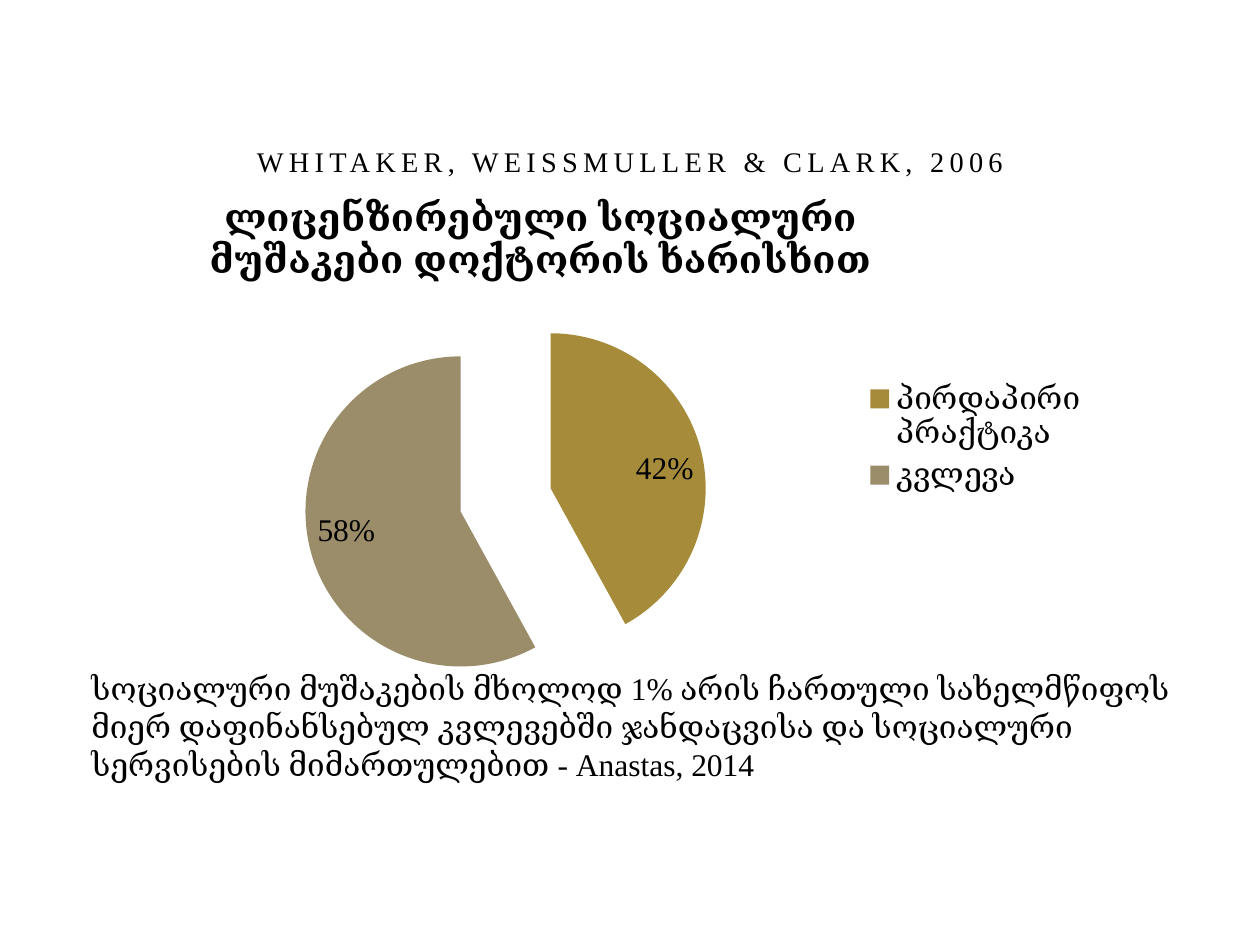
from lxml import etree
from pptx import Presentation
from pptx.chart.data import CategoryChartData as Data
from pptx.dml.color import RGBColor as RGB
from pptx.enum.chart import XL_CHART_TYPE as Kind, XL_LABEL_POSITION as Spot
from pptx.enum.chart import XL_LEGEND_POSITION as Side
from pptx.enum.text import MSO_ANCHOR as Anchor, MSO_AUTO_SIZE as Fit, PP_ALIGN as Align
from pptx.oxml.ns import qn
from pptx.util import Pt

SCALE = 914400 / 126
FACE = "Times New Roman"
BLACK = RGB(0, 0, 0)
GOLD = RGB(0xA6, 0x8C, 0x3A)
TAUPE = RGB(0x9C, 0x8D, 0x6A)
HEAD = ["ლიცენზირებული სოციალური", "მუშაკები დოქტორის ხარისხით"]
NOTE = [
    "სოციალური მუშაკების მხოლოდ 1% არის ჩართული სახელმწიფოს",
    "მიერ დაფინანსებულ კვლევებში ჯანდაცვისა და სოციალური",
    "სერვისების მიმართულებით - Anastas, 2014",
]


def px(*nums):
    return [round(n * SCALE) for n in nums]


def style(font, size, bold=False):
    font.name = FACE
    font.size = Pt(size)
    font.bold = bold
    font.color.rgb = BLACK


def fill_text(frame, lines, size, bold=False):
    frame.text = "\n".join(lines)
    for para in frame.paragraphs:
        style(para.font, size, bold)


def add_title(slide, text):
    title = slide.shapes.title
    title.left, title.top, title.width, title.height = px(189, 145, 882, 40)
    frame = title.text_frame
    frame.auto_size = Fit.NONE
    frame.vertical_anchor = Anchor.BOTTOM
    fill_text(frame, [text], 16.2)
    para = frame.paragraphs[0]
    para.alignment = Align.CENTER
    para.runs[0].font._element.set("spc", "300")


def place(part, before, inner=False, **dims):
    for old in part.findall(qn("c:layout")):
        part.remove(old)
    lay = etree.Element(qn("c:layout"))
    man = etree.SubElement(lay, qn("c:manualLayout"))
    if inner:
        etree.SubElement(man, qn("c:layoutTarget")).set("val", "inner")
    for key in ("x", "y"):
        etree.SubElement(man, qn(f"c:{key}Mode")).set("val", "edge")
    for key, num in dims.items():
        etree.SubElement(man, qn(f"c:{key}")).set("val", str(num))
    part.find(qn(before)).addprevious(lay)


def add_pie(slide):
    data = Data()
    data.categories = ["პირდაპირი პრაქტიკა", "კვლევა"]
    data.add_series("Series 1", [42, 58])
    chart = slide.shapes.add_chart(Kind.PIE_EXPLODED, *px(126, 185, 999, 630), data).chart
    style(chart.font, 18)

    chart.has_title = True
    title = chart.chart_title
    fill_text(title.text_frame, HEAD, 21.6, True)
    title.include_in_layout = False
    place(title._element, "c:overlay", x=0.08, y=0.01)

    chart.has_legend = True
    legend = chart.legend
    legend.position = Side.RIGHT
    legend.include_in_layout = False
    style(legend.font, 18)
    place(legend._element, "c:overlay", x=0.73, y=0.3, w=0.24, h=0.2)

    plot = chart.plots[0]
    plot.vary_by_categories = True
    place(plot._element.getparent(), "c:pieChart", True, x=0.16, y=0.18, w=0.44, h=0.64)
    series = plot.series[0]
    series._element.find(qn("c:explosion")).set("val", "30")
    for num, tone in enumerate([GOLD, TAUPE]):
        fill = series.points[num].format.fill
        fill.solid()
        fill.fore_color.rgb = tone
        point = series._element.findall(qn("c:dPt"))[num]
        burst = etree.Element(qn("c:explosion"))
        burst.set("val", "30")
        point.find(qn("c:spPr")).addprevious(burst)

    plot.has_data_labels = True
    labels = plot.data_labels
    labels.show_percentage = True
    labels.show_value = False
    labels.number_format = "0%"
    labels.number_format_is_linked = False
    labels.position = Spot.INSIDE_END
    style(labels.font, 18)


def add_note(slide, lines):
    frame = slide.shapes.add_textbox(*px(79, 663, 1139, 127)).text_frame
    frame.word_wrap = True
    fill_text(frame, lines, 18)


def main():
    deck = Presentation()
    deck.slide_width, deck.slide_height = px(1260, 945)
    slide = deck.slides.add_slide(deck.slide_layouts[5])
    add_title(slide, "WHITAKER, WEISSMULLER & CLARK, 2006")
    add_pie(slide)
    add_note(slide, NOTE)
    deck.save("out.pptx")


if __name__ == "__main__":
    main()
